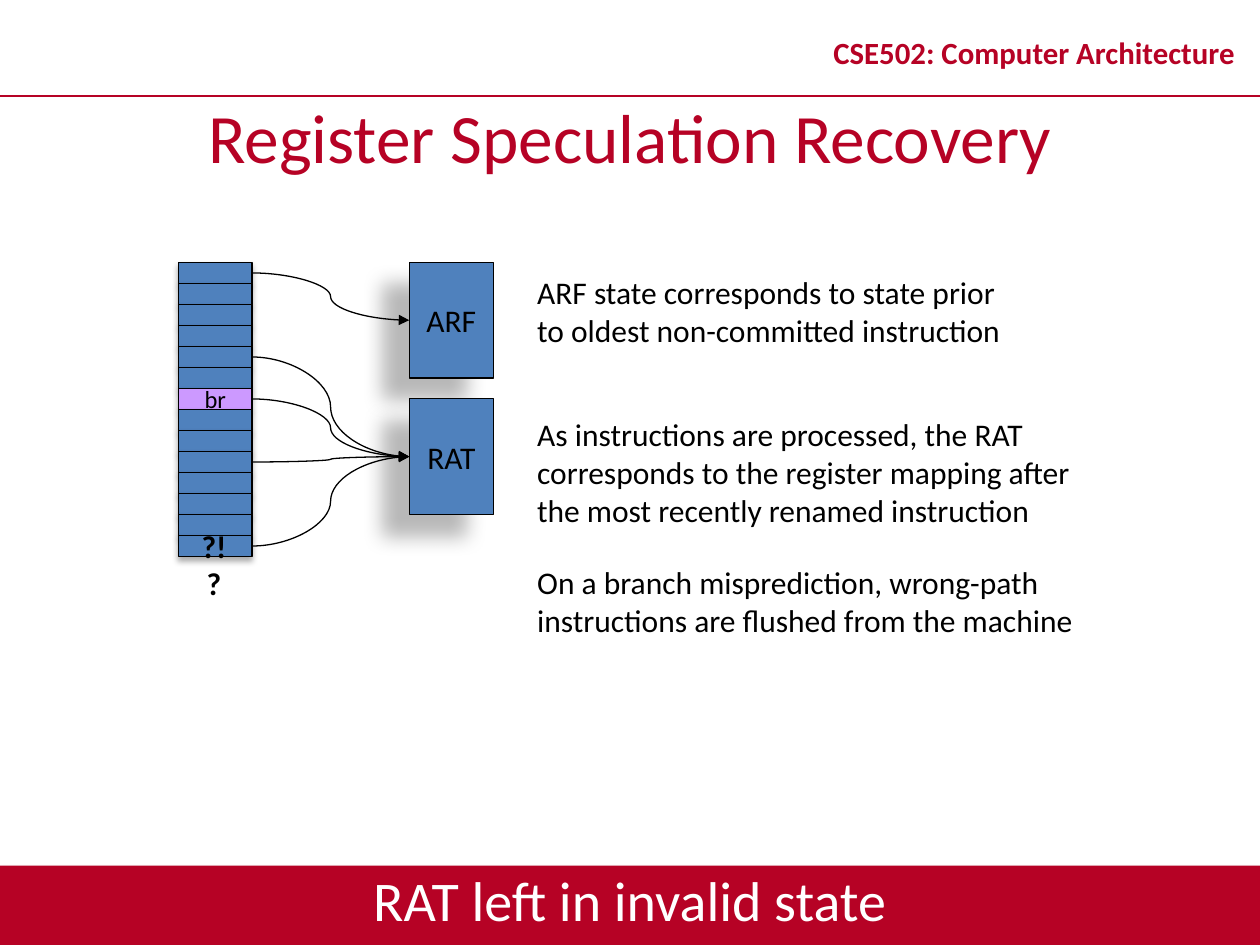
import pptx
import pptx.util
import pptx.dml.color
import pptx.enum.shapes
import pptx.enum.text
import pptx.oxml
import pptx.oxml.ns

Cm = pptx.util.Cm
Pt = pptx.util.Pt
ALIGN = pptx.enum.text.PP_ALIGN
ANCHOR = pptx.enum.text.MSO_ANCHOR
RED, BLUE, LILAC = "B60225", "4F81BD", "CC99FF"
BLACK, WHITE = "000000", "FFFFFF"
CELL = (32, 3.5, 2.2, 90)
FILE = (28, 11.8, 19.7, 141)
BAND = (35, 3.1, 1.8, 90)


def paint(target, color):
    target.rgb = pptx.dml.color.RGBColor.from_string(color)


def style(target, values):
    for name, value in values.items():
        setattr(target, name, value)


def write(frame, lines, size, color=BLACK, bold=False, align=ALIGN.LEFT,
          pace=None, **form):
    style(frame, {"word_wrap": True, **form})
    frame.text = "\n".join(lines)
    for para in frame.paragraphs:
        style(para, {"alignment": align, "line_spacing": pace})
        for run in para.runs:
            style(run.font, {"name": "Calibri", "size": Pt(size), "bold": bold})
            paint(run.font.color, color)


def label(slide, box, lines, size, **form):
    text = slide.shapes.add_textbox(*map(Cm, box))
    write(text.text_frame, lines, size, **form)


def shade(shape, alpha, blur, dist, angle):
    shape.shadow.inherit = False
    effects = shape._element.spPr.find(pptx.oxml.ns.qn("a:effectLst"))
    effects.append(pptx.oxml.parse_xml(
        f'<a:outerShdw {pptx.oxml.ns.nsdecls("a")} blurRad="{Pt(blur)}" '
        f'dist="{Pt(dist)}" dir="{angle * 60000}" algn="ctr" rotWithShape="0">'
        f'<a:srgbClr val="{BLACK}"><a:alpha val="{alpha * 1000}"/></a:srgbClr>'
        '</a:outerShdw>'))


def block(slide, box, fill, shadow, edge=BLACK):
    shape = slide.shapes.add_shape(
        pptx.enum.shapes.MSO_SHAPE.RECTANGLE, *map(Cm, box))
    shape.fill.solid()
    paint(shape.fill.fore_color, fill)
    if edge:
        paint(shape.line.color, edge)
        shape.line.width = Pt(0.75)
    else:
        shape.line.fill.background()
    shade(shape, *shadow)
    return shape


def link(slide, kind, ends, color, width):
    line = slide.shapes.add_connector(kind, *map(Cm, ends))
    paint(line.line.color, color)
    line.line.width = Pt(width)
    line._element.spPr.append(pptx.oxml.parse_xml(
        f'<a:effectLst {pptx.oxml.ns.nsdecls("a")}/>'))
    return line


def arrow(slide, start, end):
    line = link(slide, pptx.enum.shapes.MSO_CONNECTOR.CURVE,
                (0, 0, 1, 1), BLACK, 0.75)
    line.begin_connect(start, 3)
    line.end_connect(end, 1)
    line.line._get_or_add_ln().append(pptx.oxml.parse_xml(
        f'<a:tailEnd {pptx.oxml.ns.nsdecls("a")} type="triangle"/>'))


def header(slide, box):
    left, top, width, height = box
    base = top + height
    link(slide, pptx.enum.shapes.MSO_CONNECTOR.STRAIGHT,
         (left, base, left + width, base), RED, 1)
    label(slide, (left + 16.3, top + 0.33, 9.1, 1.6),
          ["CSE502: Computer Architecture"], 17.6, color=RED, bold=True,
          align=ALIGN.CENTER, pace=0.8, vertical_anchor=ANCHOR.MIDDLE)
    title = slide.shapes.title
    style(title, dict(zip(("left", "top", "width", "height"),
                          map(Cm, (left, base, width, 1.6)))))
    write(title.text_frame, ["Register Speculation Recovery"], 39.6,
          color=RED, align=ALIGN.CENTER, vertical_anchor=ANCHOR.MIDDLE)


def queue(slide, box, count, branch):
    left, top, width, height = box
    step = height / count
    rows = [block(slide, (left, top + i * step, width, step),
                  LILAC if i == branch else BLUE, CELL)
            for i in range(count)]
    write(rows[branch].text_frame, ["br"], 14, align=ALIGN.CENTER,
          vertical_anchor=ANCHOR.MIDDLE, word_wrap=False,
          margin_top=0, margin_bottom=0)
    return rows


def table(slide, box, name, rows):
    shape = block(slide, box, BLUE, FILE)
    write(shape.text_frame, [name], 18, align=ALIGN.CENTER,
          vertical_anchor=ANCHOR.MIDDLE, word_wrap=False)
    for row in rows:
        arrow(slide, row, shape)


def diagram(slide, box):
    left, top, width, height = box
    rows = queue(slide, (left, top, 1.48, height), 14, 6)
    side = left + width - 1.7
    table(slide, (side, top, 1.7, 2.33), "ARF", [rows[0]])
    table(slide, (side, top + 2.75, 1.7, 2.33), "RAT",
          [rows[i] for i in (4, 6, 9, 13)])
    label(slide, (left + 0.13, top + 5.2, 1.17, 1.02), ["?!?"], 18,
          bold=True, align=ALIGN.CENTER)


def notes(slide, box):
    left, top, width, height = box
    items = [
        (0, 1.8, ["ARF state corresponds to state prior",
                  "to oldest non-committed instruction"]),
        (2.87, 2.54, ["As instructions are processed, the RAT corresponds "
                      "to the register mapping after",
                      "the most recently renamed instruction"]),
        (5.84, 1.78, ["On a branch misprediction, wrong-path",
                      "instructions are flushed from the machine"]),
    ]
    for drop, tall, lines in items:
        label(slide, (left, top + drop, width, tall), lines, 18)


def footer(slide, box):
    left, top, width, height = box
    block(slide, box, RED, BAND, edge=None)
    label(slide, (left, top - 0.13, width, height),
          ["RAT left in invalid state"], 32, color=WHITE, align=ALIGN.CENTER)


def main():
    deck = pptx.Presentation()
    style(deck, {"slide_width": Cm(25.4), "slide_height": Cm(19.05)})
    slide = deck.slides.add_slide(deck.slide_layouts[5])
    header(slide, (0, 0, 25.4, 1.93))
    diagram(slide, (3.6, 5.29, 6.35, 5.93))
    notes(slide, (10.58, 5.38, 12.28, 7.62))
    footer(slide, (0, 17.45, 25.4, 1.6))
    deck.save("out.pptx")


if __name__ == "__main__":
    main()
